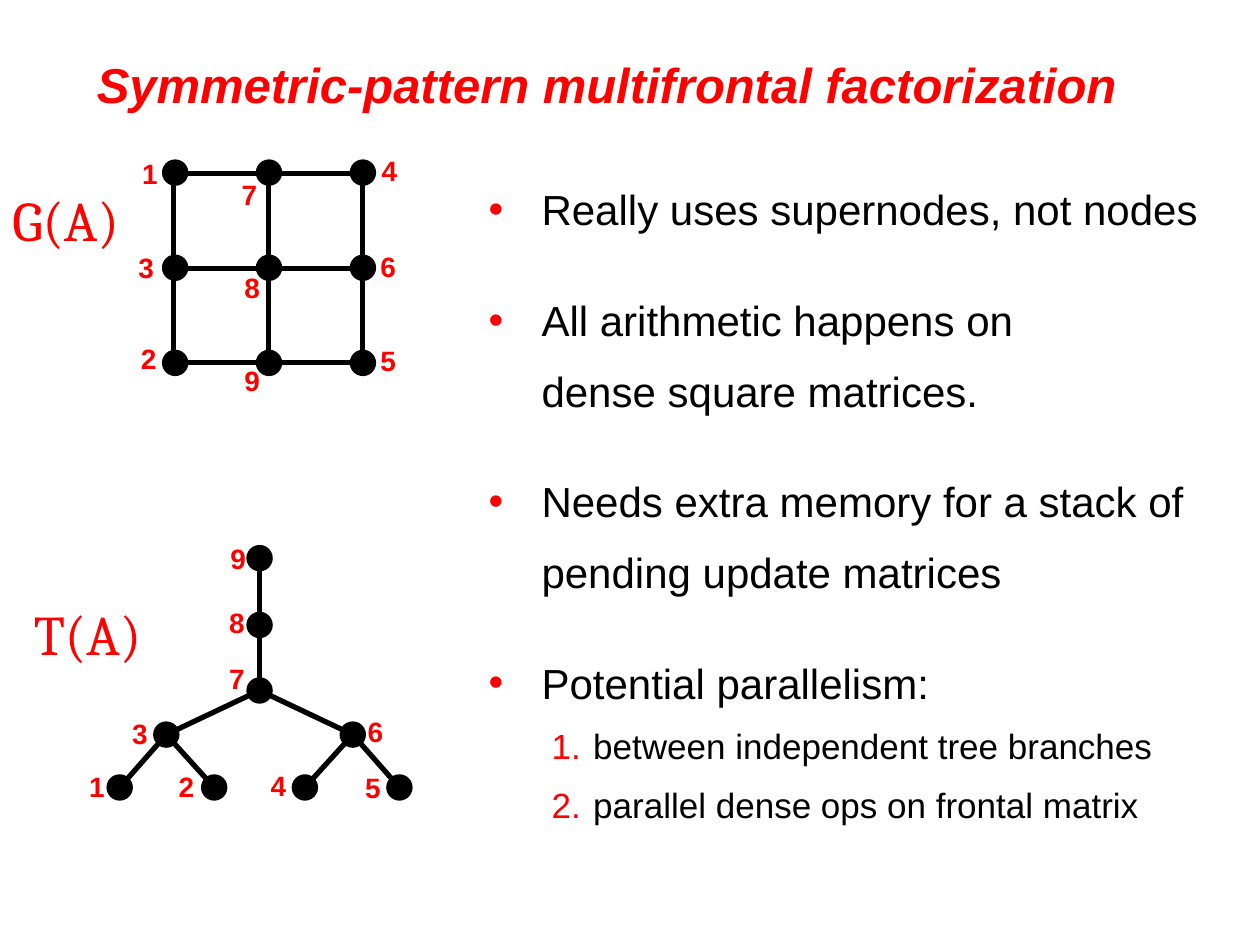
from lxml.etree import SubElement
from pptx import Presentation
from pptx.dml.color import RGBColor
from pptx.enum.shapes import MSO_CONNECTOR, MSO_SHAPE
from pptx.enum.text import MSO_ANCHOR, MSO_AUTO_SIZE
from pptx.oxml.ns import qn
from pptx.util import Inches, Pt

COLORS = {"accent": "FF0000", "ink": "000000"}
NODE_SIZE = 0.21

deck = Presentation()
deck.slide_width, deck.slide_height = Inches(10), Inches(7.5)
page = deck.slides.add_slide(deck.slide_layouts[6])


def add_text(text, left, top, width, height, size, font="Arial", bold=False, italic=False, wrap=False):
    box = page.shapes.add_textbox(Inches(left), Inches(top), Inches(width), Inches(height))
    frame = box.text_frame
    frame.text = text
    frame.word_wrap = wrap
    frame.auto_size = MSO_AUTO_SIZE.NONE if wrap else MSO_AUTO_SIZE.SHAPE_TO_FIT_TEXT
    for para in frame.paragraphs:
        for span in para.runs:
            span.font.size, span.font.name = Pt(size), font
            span.font.bold, span.font.italic = bold, italic
            span.font.color.rgb = RGBColor.from_string(COLORS["accent"])
    return frame


def draw_graph(edges, nodes, labels):
    """Draw edges between points, then node dots by centre, then labels by top left corner."""
    for start, end in edges:
        line = page.shapes.add_connector(MSO_CONNECTOR.STRAIGHT, *map(Inches, (*start, *end)))
        line.line.width = Pt(3)
        line.line.color.rgb = RGBColor.from_string(COLORS["ink"])
        SubElement(line._element.spPr, qn("a:effectLst"))
    for x, y in nodes:
        dot = page.shapes.add_shape(
            MSO_SHAPE.OVAL, Inches(x - NODE_SIZE / 2), Inches(y - NODE_SIZE / 2),
            Inches(NODE_SIZE), Inches(NODE_SIZE))
        dot.shadow.inherit = False
        dot.fill.solid()
        dot.fill.fore_color.rgb = RGBColor.from_string(COLORS["ink"])
        dot.line.fill.background()
    for number, (left, top) in labels.items():
        add_text(str(number), left, top, 0.32, 0.37, 16, bold=True)


title = add_text("Symmetric-pattern multifrontal factorization",
                 0.67, 0.33, 8.75, 0.67, 28, bold=True, italic=True, wrap=True)
title.vertical_anchor = MSO_ANCHOR.MIDDLE

# Elimination tree T(A)
add_text("T(A)", 0.17, 4.71, 1.2, 0.63, 32, font="Cambria")
tree_nodes = {
    9: (2.06, 4.43), 8: (2.06, 4.96), 7: (2.06, 5.48),
    3: (1.32, 5.83), 6: (2.8, 5.83),
    1: (0.95, 6.25), 2: (1.7, 6.25), 4: (2.42, 6.25), 5: (3.17, 6.25),
}
tree_parents = {8: 9, 7: 8, 3: 7, 6: 7, 1: 3, 2: 3, 4: 6, 5: 6}
tree_labels = {
    1: (0.61, 6.06), 2: (1.32, 6.06), 3: (0.95, 5.64), 4: (2.05, 6.05), 5: (2.8, 6.07),
    6: (2.82, 5.62), 7: (1.72, 5.2), 8: (1.72, 4.76), 9: (1.73, 4.25),
}
tree_edges = [(tree_nodes[child], tree_nodes[parent]) for child, parent in tree_parents.items()]
draw_graph(tree_edges, tree_nodes.values(), tree_labels)

# Grid graph G(A)
add_text("G(A)", 0, 1.42, 1.25, 0.63, 32, font="Cambria")
grid_edges = []
for step in range(3):
    x = y = 1.38 + 0.75 * step
    grid_edges += [((x, 1.36), (x, 2.89)), ((1.37, y), (2.9, y))]
grid_nodes = [(1.39 + 0.745 * column, 1.37 + 0.755 * row) for row in range(3) for column in range(3)]
grid_labels = {
    1: (1.03, 1.19), 2: (1.02, 2.66), 3: (1, 1.94), 4: (2.93, 1.17), 5: (2.92, 2.68),
    6: (2.92, 1.93), 7: (1.82, 1.36), 8: (1.84, 2.1), 9: (1.84, 2.84),
}
draw_graph(grid_edges, grid_nodes, grid_labels)

# Bulleted remarks, with two numbered points under the last one
remarks = [
    ("Really uses supernodes, not nodes", 0),
    ("All arithmetic happens on \vdense square matrices.", 0),
    ("Needs extra memory for a stack of pending update matrices", 0),
    ("Potential parallelism:", 0),
    ("between independent tree branches", 1),
    ("parallel dense ops on frontal matrix", 1),
]
body = add_text("\n".join(text for text, level in remarks), 3.78, 1.25, 6, 5.67, 24, wrap=True)
for index, (para, (text, level)) in enumerate(zip(body.paragraphs, remarks)):
    para.level = level
    para.line_spacing = 1.4
    para.space_before = Pt(23 if index and level == 0 else 0)
    for span in para.runs:
        span.font.size = Pt(20 if level else 24)
        span.font.color.rgb = RGBColor.from_string(COLORS["ink"])
    margin, indent = (0.83, -0.33) if level else (0.42, -0.42)
    props = para._p.get_or_add_pPr()
    props.set("marL", str(Inches(margin)))
    props.set("indent", str(Inches(indent)))
    SubElement(SubElement(props, qn("a:buClr")), qn("a:srgbClr"), val=COLORS["accent"])
    SubElement(props, qn("a:buFont"), typeface="Arial")
    if level:
        SubElement(props, qn("a:buAutoNum"), type="arabicPeriod")
    else:
        SubElement(props, qn("a:buChar"), char="•")

deck.save("out.pptx")
